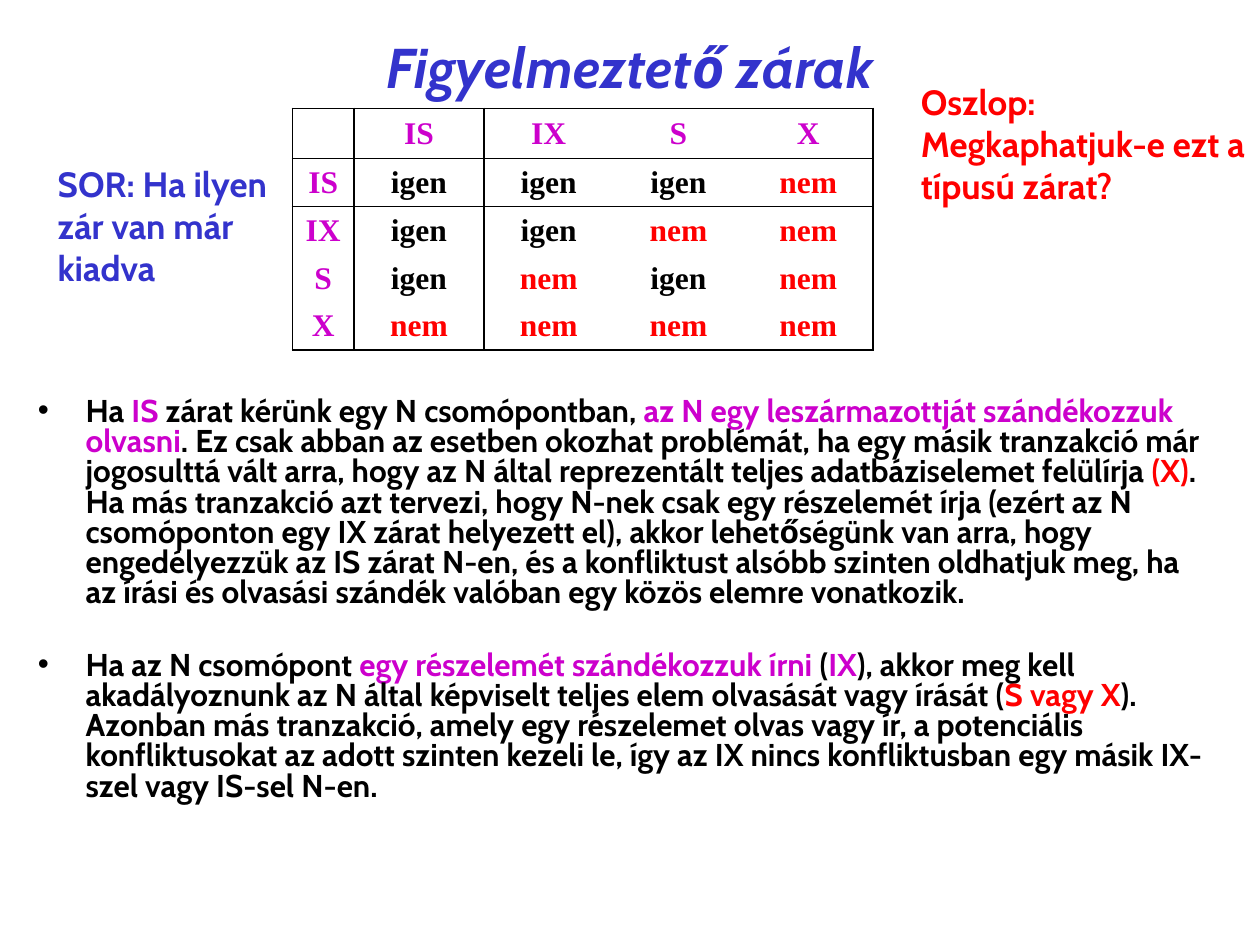
from dataclasses import dataclass

from lxml.etree import SubElement
from pptx import Presentation
from pptx.dml.color import RGBColor
from pptx.enum.text import MSO_ANCHOR, MSO_AUTO_SIZE, PP_ALIGN
from pptx.oxml.ns import qn
from pptx.util import Inches, Pt

BLUE = RGBColor(0x33, 0x33, 0xCC)
PURPLE = RGBColor(0xCC, 0x00, 0xCC)
RED = RGBColor(0xFF, 0x00, 0x00)
BLACK = RGBColor(0x00, 0x00, 0x00)
SANS = "Cabin"
SERIF = "Times New Roman"


@dataclass
class Span:
    text: str
    color: RGBColor = BLACK


@dataclass
class Note:
    text: str
    color: RGBColor
    left: float
    top: float
    width: float
    height: float = 1.1


LOCKS = ["IS", "IX", "S", "X"]
ANSWERS = [
    ["igen", "igen", "igen", "nem"],
    ["igen", "igen", "nem", "nem"],
    ["igen", "nem", "igen", "nem"],
    ["nem", "nem", "nem", "nem"],
]
NOTES = [
    Note("SOR: Ha ilyen zár van már kiadva", BLUE, 0.36, 1.24, 2.05),
    Note("Oszlop: Megkaphatjuk-e ezt a típusú zárat?", RED, 7.21, 0.59, 2.79),
]
BULLETS = [
    [
        Span("Ha "),
        Span("IS ", PURPLE),
        Span("zárat kérünk egy N csomópontban, "),
        Span("az N egy leszármazottját szándékozzuk olvasni", PURPLE),
        Span(". Ez csak abban az esetben okozhat problémát, ha egy másik "
             "tranzakció már jogosulttá vált arra, hogy az N által reprezentált "
             "teljes adatbáziselemet felülírja"),
        Span(" (X)", RED),
        Span(". Ha más tranzakció azt tervezi, hogy N-nek csak egy részelemét "
             "írja (ezért az N csomóponton egy IX zárat helyezett el), akkor "
             "lehetőségünk van arra, hogy engedélyezzük az IS zárat N-en, és a "
             "konfliktust alsóbb szinten oldhatjuk meg, ha az írási és olvasási "
             "szándék valóban egy közös elemre vonatkozik."),
    ],
    [
        Span("Ha az N csomópont "),
        Span("egy részelemét szándékozzuk írni", PURPLE),
        Span(" ("),
        Span("IX", PURPLE),
        Span("), akkor meg kell akadályoznunk az N által képviselt teljes elem "
             "olvasását vagy írását ("),
        Span("S vagy X", RED),
        Span("). Azonban más tranzakció, amely egy részelemet olvas vagy ír, a "
             "potenciális konfliktusokat az adott szinten kezeli le, így az IX "
             "nincs konfliktusban egy másik IX-szel vagy IS-sel N-en."),
    ],
]


def place(shape, left: float, top: float, width: float, height: float) -> None:
    shape.left, shape.top = Inches(left), Inches(top)
    shape.width, shape.height = Inches(width), Inches(height)


def style(run, size: int, color: RGBColor, font: str = SANS) -> None:
    run.font.name, run.font.size, run.font.bold = font, Pt(size), True
    run.font.color.rgb = color


def add_title(page, text: str) -> None:
    title = page.shapes.title
    place(title, 0.75, 0.2, 8.5, 0.65)
    frame = title.text_frame
    frame.text = text
    frame.auto_size = MSO_AUTO_SIZE.NONE
    frame.vertical_anchor = MSO_ANCHOR.MIDDLE
    paragraph = frame.paragraphs[0]
    paragraph.alignment = PP_ALIGN.CENTER
    style(paragraph.runs[0], 32, BLUE)
    paragraph.runs[0].font.italic = True


def add_bullets(page, bullets: list[list[Span]]) -> None:
    body = page.placeholders[1]
    place(body, 0.2, 3.11, 9.45, 4.15)
    frame = body.text_frame
    frame.auto_size = MSO_AUTO_SIZE.NONE
    for index, spans in enumerate(bullets):
        paragraph = frame.add_paragraph() if index else frame.paragraphs[0]
        paragraph.line_spacing = 0.8
        paragraph.space_before = Pt(24 if index else 4)
        properties = paragraph._p.get_or_add_pPr()
        properties.set("marL", str(Inches(0.38)))
        properties.set("indent", str(-Inches(0.38)))
        SubElement(properties, qn("a:buChar"), char="•")
        for span in spans:
            run = paragraph.add_run()
            run.text = span.text
            style(run, 18, span.color)


def add_note(page, note: Note) -> None:
    box = page.shapes.add_textbox(Inches(note.left), Inches(note.top),
                                  Inches(note.width), Inches(note.height))
    box.text_frame.word_wrap = True
    box.text_frame.text = note.text
    style(box.text_frame.paragraphs[0].runs[0], 20, note.color)


def set_borders(cell, sides: dict[str, bool]) -> None:
    properties = cell._tc.get_or_add_tcPr()
    position = 0
    for side, visible in sides.items():
        if visible:
            line = SubElement(properties, qn(f"a:{side}"), w=str(Pt(1)))
            fill = SubElement(line, qn("a:solidFill"))
            SubElement(fill, qn("a:srgbClr"), val=str(BLACK))
            # Borders come before the fill in the cell properties
            properties.insert(position, line)
            position += 1


def add_lock_table(page) -> None:
    rows = [["", *LOCKS]] + [[lock, *row] for lock, row in zip(LOCKS, ANSWERS)]
    last = len(LOCKS)
    frame = page.shapes.add_table(last + 1, last + 1, Inches(2.32), Inches(0.86),
                                  Inches(4.61), Inches(1.92))
    table = frame.table
    table.first_row = table.horz_banding = False
    # Plain style without grid
    style_id = table._tbl.tblPr.find(qn("a:tableStyleId"))
    style_id.text = "{2D5ABB26-0587-4C30-8999-92F81FD0307C}"
    for index in range(last + 1):
        table.columns[index].width = Inches(1.03 if index else 0.49)
        table.rows[index].height = Inches(0.38 if index else 0.4)

    for r, row in enumerate(rows):
        for c, text in enumerate(row):
            cell = table.cell(r, c)
            cell.fill.background()
            cell.vertical_anchor = MSO_ANCHOR.MIDDLE
            cell.margin_top = cell.margin_bottom = Inches(0.04)
            cell.margin_left = cell.margin_right = Inches(0.05)
            cell.text_frame.text = text
            paragraph = cell.text_frame.paragraphs[0]
            paragraph.alignment = PP_ALIGN.CENTER
            paragraph.font.size = Pt(18)
            color = PURPLE if 0 in (r, c) else RED if text == "nem" else BLACK
            for run in paragraph.runs:
                style(run, 18, color, SERIF)
            # Outer frame, plus lines beside the header row and column
            set_borders(cell, {"lnL": c <= 1, "lnR": c in (0, last),
                               "lnT": r <= 1, "lnB": r in (0, last)})


def main() -> None:
    deck = Presentation()
    deck.slide_width, deck.slide_height = Inches(10), Inches(7.5)
    page = deck.slides.add_slide(deck.slide_layouts[1])
    add_title(page, "Figyelmeztető zárak")
    add_bullets(page, BULLETS)
    add_lock_table(page)
    for note in NOTES:
        add_note(page, note)
    deck.save("out.pptx")


if __name__ == "__main__":
    main()
